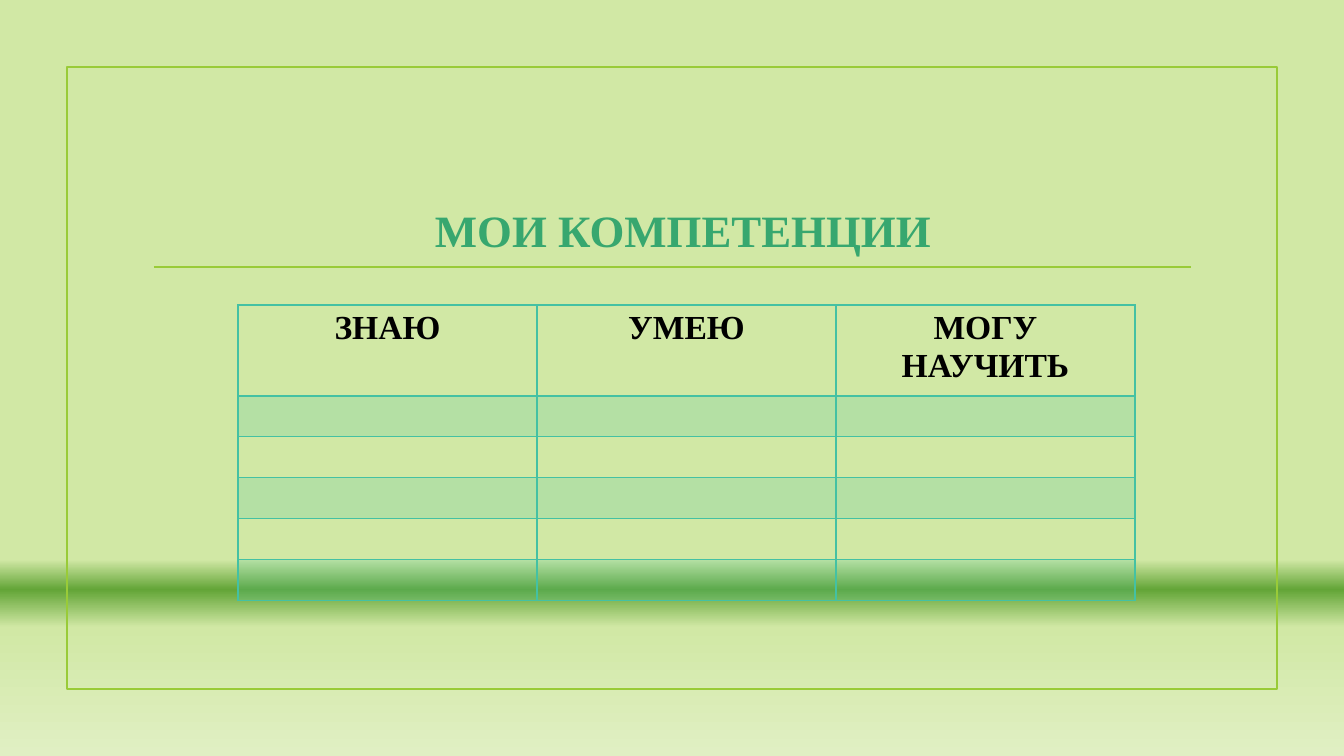
from lxml import etree
from pptx import Presentation
from pptx import util as u
from pptx.dml.color import RGBColor
from pptx.enum import shapes, text
from pptx.oxml.ns import qn

PX = 914400 / 100.8
LIME = RGBColor(0x99, 0xCB, 0x38)
GREEN = RGBColor(0x37, 0xA7, 0x6F)
TEAL = RGBColor(0x44, 0xC1, 0xA3)
BLACK = RGBColor(0, 0, 0)
PALE = RGBColor(0xD1, 0xE8, 0xA5)
GRASS = RGBColor(0x63, 0xA5, 0x37)
MIST = RGBColor(0xE0, 0xEF, 0xC3)


def px(*values):
    return [u.Emu(round(v * PX)) for v in values]


def add_color(parent, color):
    return etree.SubElement(parent, qn("a:srgbClr"), val=str(color))


class Slide:
    font = "Times New Roman"
    line_width = u.Pt(1.25)

    def __init__(self, prs):
        self.s = prs.slides.add_slide(prs.slide_layouts[6])

    def background(self, stops):
        fill = self.s.background.fill
        fill.gradient()
        fill.gradient_angle = 270
        stop_list = next(self.s.element.iter(qn("a:gsLst")))
        for gs in list(stop_list):
            stop_list.remove(gs)
        for percent, color in stops:
            gs = etree.SubElement(stop_list, qn("a:gs"), pos=str(percent * 1000))
            add_color(gs, color)

    def frame(self, x, y, w, h, color):
        sp = self.s.shapes.add_shape(shapes.MSO_SHAPE.RECTANGLE, *px(x, y, w, h))
        sp.shadow.inherit = False
        sp.fill.background()
        sp.line.color.rgb = color
        sp.line.width = self.line_width

    def line(self, x1, y1, x2, y2, color):
        cn = self.s.shapes.add_connector(
            shapes.MSO_CONNECTOR.STRAIGHT, *px(x1, y1, x2, y2))
        cn.line.color.rgb = color
        cn.line.width = self.line_width
        etree.SubElement(cn._element.spPr, qn("a:effectLst"))

    def label(self, tf, words, size, color):
        tf.text = words
        p = tf.paragraphs[0]
        p.alignment = text.PP_ALIGN.CENTER
        for r in p.runs:
            r.font.name = self.font
            r.font.size = u.Pt(size)
            r.font.bold = True
            r.font.color.rgb = color

    def title(self, x, y, w, h, words, size, color):
        tf = self.s.shapes.add_textbox(*px(x, y, w, h)).text_frame
        tf.word_wrap = True
        tf.vertical_anchor = text.MSO_ANCHOR.MIDDLE
        self.label(tf, words, size, color)

    def borders(self, cell, color, bottom):
        tcPr = cell._tc.get_or_add_tcPr()
        widths = {"lnL": 1, "lnR": 1, "lnT": 1, "lnB": bottom}
        for i, (side, width) in enumerate(widths.items()):
            ln = etree.Element(qn("a:" + side), w=str(u.Pt(width)))
            add_color(etree.SubElement(ln, qn("a:solidFill")), color)
            tcPr.insert(i, ln)

    def table(self, x, y, heads, col_w, head_h, row_h, body_rows, color):
        w, h = col_w * len(heads), head_h + row_h * body_rows
        tbl = self.s.shapes.add_table(
            body_rows + 1, len(heads), *px(x, y, w, h)).table
        tbl.first_row = tbl.horz_banding = False
        for i, row in enumerate(tbl.rows):
            row.height = px(row_h if i else head_h)[0]
            for j, cell in enumerate(row.cells):
                cell.margin_left = cell.margin_right = px(11)[0]
                # Odd body rows carry a translucent band
                if i % 2:
                    cell.fill.solid()
                    cell.fill.fore_color.rgb = color
                    clr = next(cell._tc.iter(qn("a:srgbClr")))
                    etree.SubElement(clr, qn("a:alpha"), val="20000")
                else:
                    cell.fill.background()
                if i == 0:
                    self.label(cell.text_frame, heads[j], 24, BLACK)
                # The header's lower edge is twice as thick
                self.borders(cell, color, 1 if i else 2)


def main():
    prs = Presentation()
    prs.slide_width, prs.slide_height = px(1344, 756)
    slide = Slide(prs)

    # Backdrop with the green horizon
    slide.background([(74, PALE), (78, GRASS), (83, PALE), (100, MIST)])
    slide.frame(67, 67, 1210, 622, LIME)

    # Heading and its rule
    slide.line(154, 267, 1191, 267, LIME)
    slide.title(231, 207, 904, 45, "МОИ КОМПЕТЕНЦИИ", 32, GREEN)

    # Competence table
    slide.table(238, 305, ["ЗНАЮ", "УМЕЮ", "МОГУ НАУЧИТЬ"],
                col_w=299, head_h=84, row_h=41, body_rows=5, color=TEAL)
    prs.save("out.pptx")


if __name__ == "__main__":
    main()
